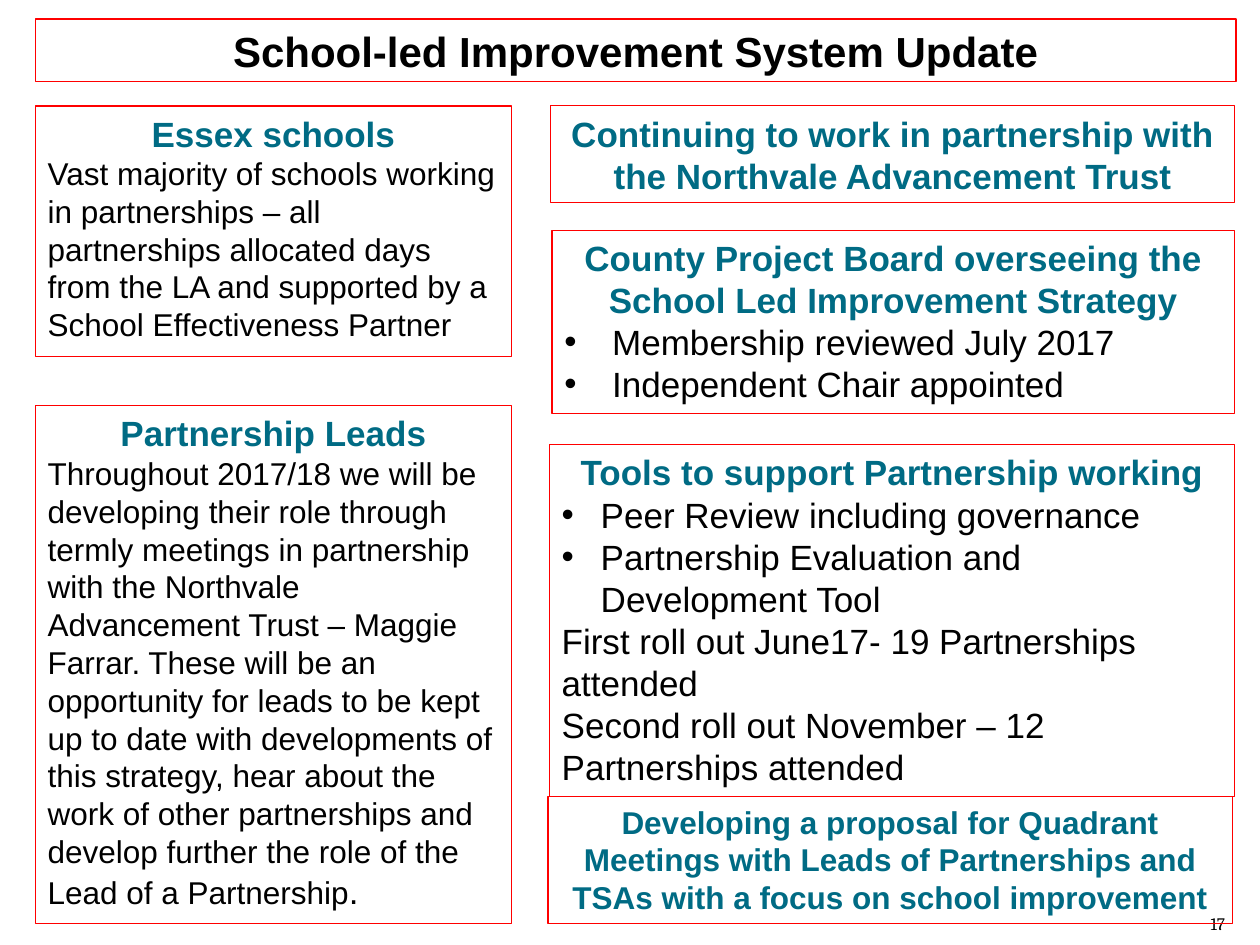
from lxml import etree
from pptx import Presentation
from pptx.dml.color import RGBColor
from pptx.enum.shapes import MSO_SHAPE
from pptx.enum.text import MSO_ANCHOR, MSO_AUTO_SIZE, PP_ALIGN
from pptx.oxml.ns import qn
from pptx.util import Inches, Pt

RECTANGLE = MSO_SHAPE.RECTANGLE
TOP, MIDDLE = MSO_ANCHOR.TOP, MSO_ANCHOR.MIDDLE
GROW = MSO_AUTO_SIZE.SHAPE_TO_FIT_TEXT
LEFT, CENTER = PP_ALIGN.LEFT, PP_ALIGN.CENTER

COLORS = {"border": "FF0000", "heading": "006B84", "text": "000000"}
TITLE_ONLY = 5


def add_span(para, text, size=20, color="text", bold=False, font="Arial"):
    span = para.add_run()
    span.text = text
    span.font.size = Pt(size)
    span.font.name = font
    span.font.bold = bold
    span.font.color.rgb = RGBColor.from_string(COLORS[color])


def add_bullet(para, indent):
    properties = para._p.get_or_add_pPr()
    properties.set("marL", str(Inches(indent)))
    properties.set("indent", str(-Inches(indent)))
    etree.SubElement(properties, qn("a:buFont")).set("typeface", "Arial")
    etree.SubElement(properties, qn("a:buChar")).set("char", "•")


class PageBuilder:
    def __init__(self, deck):
        self.page = deck.slides.add_slide(deck.slide_layouts[TITLE_ONLY])

    def place(self, box, left, top, width, height):
        box.left, box.top = Inches(left), Inches(top)
        box.width, box.height = Inches(width), Inches(height)

    def outline(self, box):
        box.fill.background()
        box.line.color.rgb = RGBColor.from_string(COLORS["border"])
        box.line.width = Pt(0.75)

    def title(self, text, *area):
        box = self.page.shapes.title
        self.place(box, *area)
        self.outline(box)
        frame = box.text_frame
        frame.vertical_anchor = MIDDLE
        frame.paragraphs[0].alignment = CENTER
        add_span(frame.paragraphs[0], text, size=24, bold=True)

    def page_number(self, text, *area):
        box = self.page.shapes.add_textbox(*map(Inches, area))
        box.text_frame.word_wrap = True
        add_span(box.text_frame.paragraphs[0], text, size=10, font="Cambria")

    def panel(self, heading, *area, size=20):
        box = self.page.shapes.add_shape(RECTANGLE, *map(Inches, area))
        box.shadow.inherit = False
        self.outline(box)
        frame = box.text_frame
        frame.word_wrap = True
        frame.auto_size = GROW
        frame.vertical_anchor = TOP
        para = frame.paragraphs[0]
        para.alignment = CENTER
        add_span(para, heading, size=size, color="heading", bold=True)
        return frame

    def body(self, frame, text, size=20, indent=None):
        para = frame.add_paragraph()
        para.alignment = LEFT
        if indent:
            add_bullet(para, indent)
        add_span(para, text, size=size)
        return para


def main():
    deck = Presentation()
    deck.slide_width, deck.slide_height = Inches(10), Inches(7.5)
    builder = PageBuilder(deck)

    builder.title("School-led Improvement System Update", 0.28, 0.15, 9.53, 0.5)
    builder.page_number("17", 9.51, 7.2, 0.48, 0.33)

    leads = builder.panel("Partnership Leads", 0.28, 3.22, 3.78, 4.11)
    para = builder.body(
        leads,
        "Throughout 2017/18 we will be developing their role through termly "
        "meetings in partnership with the Northvale Advancement Trust – Maggie "
        "Farrar. These will be an opportunity for leads to be kept up to date "
        "with developments of this strategy, hear about the work of other "
        "partnerships and develop further the role of the Lead of a Partnership",
        size=18,
    )
    add_span(para, ".")

    builder.panel(
        "Continuing to work in partnership with the Northvale Advancement Trust",
        4.37, 0.84, 5.43, 0.77,
    )

    board = builder.panel(
        "County Project Board overseeing the School Led Improvement Strategy",
        4.38, 1.83, 5.42, 1.45,
    )
    for text in ("Membership reviewed July 2017", "Independent Chair appointed"):
        builder.body(board, text, indent=0.38)

    tools = builder.panel(
        "Tools to support Partnership working", 4.36, 3.53, 5.44, 2.79
    )
    for text, indent in (
        ("Peer Review including governance", 0.31),
        ("Partnership Evaluation and Development Tool", 0.31),
        ("First roll out June17- 19 Partnerships attended", None),
        ("Second roll out November – 12 Partnerships attended", None),
    ):
        builder.body(tools, text, indent=indent)

    schools = builder.panel("Essex schools", 0.28, 0.84, 3.78, 1.99)
    builder.body(
        schools,
        "Vast majority of schools working in partnerships – all partnerships "
        "allocated days from the LA and supported by a School Effectiveness "
        "Partner",
        size=18,
    )

    builder.panel(
        "Developing a proposal for Quadrant Meetings with Leads of Partnerships "
        "and TSAs with a focus on school improvement",
        4.35, 6.32, 5.43, 1.01, size=18,
    )

    deck.save("out.pptx")


if __name__ == "__main__":
    main()
